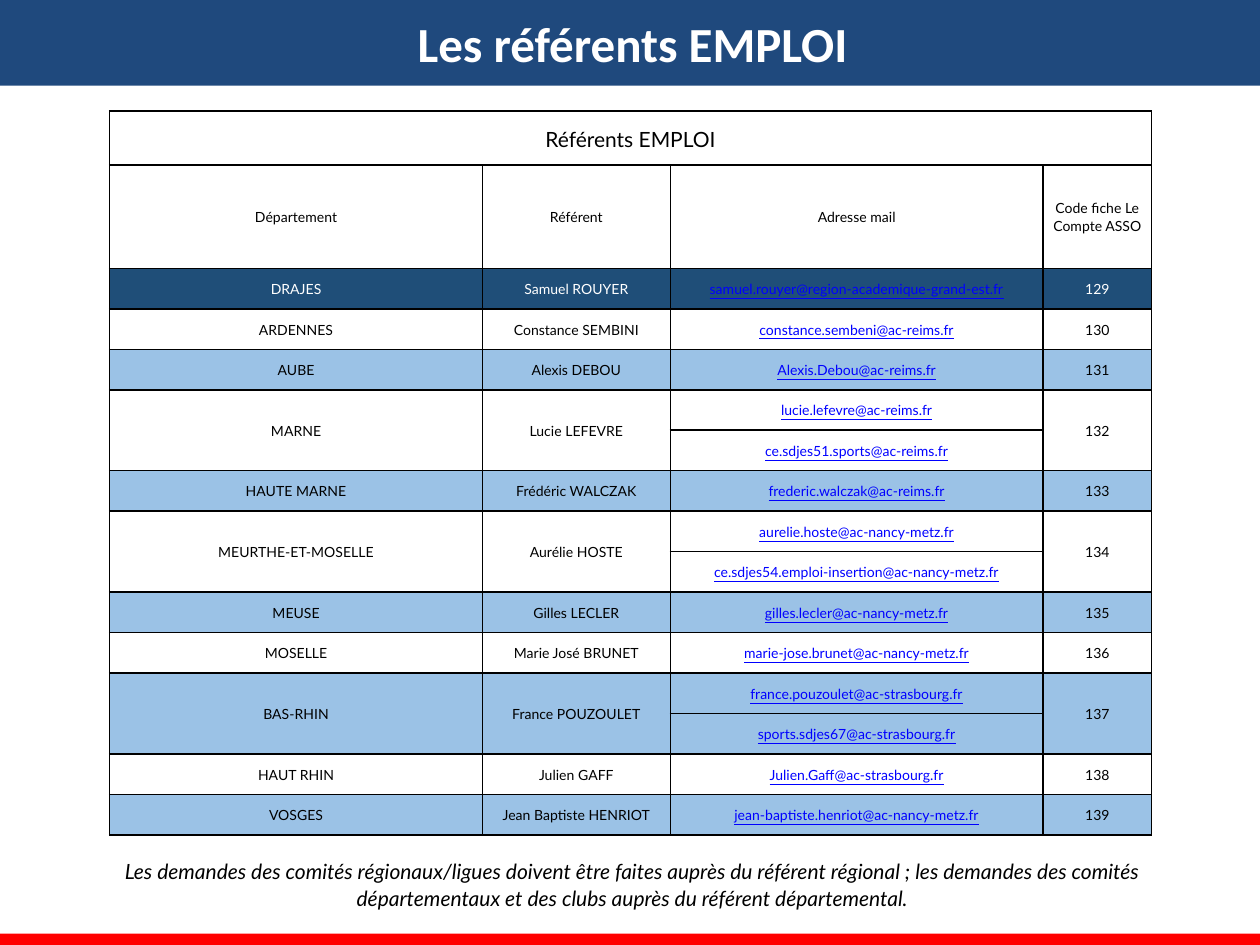
"""Build the slide listing the EMPLOI contacts by department."""
from lxml import etree
from pptx import Presentation
from pptx.dml.color import RGBColor
from pptx.enum.shapes import MSO_SHAPE
from pptx.enum.text import MSO_ANCHOR as ANCHOR, MSO_AUTO_SIZE as AUTOSIZE, PP_ALIGN as ALIGN
from pptx.oxml.ns import qn
from pptx.util import Inches, Pt

CONTACTS = [
    ("DRAJES", "Samuel ROUYER", ["samuel.rouyer@region-academique-grand-est.fr"]),
    ("ARDENNES", "Constance SEMBINI", ["constance.sembeni@ac-reims.fr"]),
    ("AUBE", "Alexis DEBOU", ["Alexis.Debou@ac-reims.fr"]),
    ("MARNE", "Lucie LEFEVRE", ["lucie.lefevre@ac-reims.fr", "ce.sdjes51.sports@ac-reims.fr"]),
    ("HAUTE MARNE", "Frédéric WALCZAK", ["frederic.walczak@ac-reims.fr"]),
    ("MEURTHE-ET-MOSELLE", "Aurélie HOSTE",
     ["aurelie.hoste@ac-nancy-metz.fr", "ce.sdjes54.emploi-insertion@ac-nancy-metz.fr"]),
    ("MEUSE", "Gilles LECLER", ["gilles.lecler@ac-nancy-metz.fr"]),
    ("MOSELLE", "Marie José BRUNET", ["marie-jose.brunet@ac-nancy-metz.fr"]),
    ("BAS-RHIN", "France POUZOULET",
     ["france.pouzoulet@ac-strasbourg.fr", "sports.sdjes67@ac-strasbourg.fr"]),
    ("HAUT RHIN", "Julien GAFF", ["Julien.Gaff@ac-strasbourg.fr"]),
    ("VOSGES", "Jean Baptiste HENRIOT", ["jean-baptiste.henriot@ac-nancy-metz.fr"]),
]
HEADERS = ["Département", "Référent", "Adresse mail", "Code fiche Le Compte ASSO"]
FIRST_CODE = 129


def rgb(color):
    return RGBColor.from_string(color)


def write(tf, text, size, color="000000", font="Lato", spacing=1.07, after=8):
    p = tf.paragraphs[0]
    p.text = text
    p.alignment = ALIGN.CENTER
    p.line_spacing = spacing
    p.space_after = Pt(after)
    r = p.runs[0]
    r.font.name = font
    r.font.size = Pt(size)
    r.font.color.rgb = rgb(color)
    return r


prs = Presentation()
prs.slide_width, prs.slide_height = Inches(10), Inches(7.5)
s = prs.slides.add_slide(prs.slide_layouts[5])

title = s.shapes.title
title.left, title.top, title.width, title.height = 0, 0, Inches(10.04), Inches(0.68)
title.fill.solid()
title.fill.fore_color.rgb = rgb("1F497D")
title.text_frame.auto_size = AUTOSIZE.NONE
title.text_frame.vertical_anchor = ANCHOR.MIDDLE
write(title.text_frame, "Les référents EMPLOI", 28, "FFFFFF", "Calibri", 1.0, 0).font.bold = True

footer = s.shapes.add_shape(MSO_SHAPE.RECTANGLE, 0, Inches(7.41), Inches(10), Inches(0.1))
footer.shadow.inherit = False
footer.fill.solid()
footer.fill.fore_color.rgb = rgb("FF0000")
footer.line.fill.background()

n_mails = sum(len(mails) for _, _, mails in CONTACTS)
table = s.shapes.add_table(n_mails + 2, 4, Inches(0.87), Inches(0.88),
                           Inches(8.27), Inches(5.75)).table
table.first_row = table.horz_banding = False
for col, width in zip(table.columns, [2.96, 1.49, 2.96, 0.86]):
    col.width = Inches(width)
for row, height in zip(table.rows, [0.43, 0.82] + [4.5 / n_mails] * n_mails):
    row.height = Inches(height)

for cell in table.iter_cells():
    cell.margin_left = cell.margin_right = Inches(0.04)
    cell.margin_top = cell.margin_bottom = 0
    cell.vertical_anchor = ANCHOR.MIDDLE
    tcPr = cell._tc.get_or_add_tcPr()
    for side in ("a:lnL", "a:lnR", "a:lnT", "a:lnB"):
        ln = etree.SubElement(tcPr, qn(side), w=str(Pt(1)))
        fill = etree.SubElement(ln, qn("a:solidFill"))
        etree.SubElement(fill, qn("a:srgbClr"), val="000000")
    cell.fill.background()

table.cell(0, 0).merge(table.cell(0, 3))
write(table.cell(0, 0).text_frame, "Référents EMPLOI", 12)
for c, header in enumerate(HEADERS):
    write(table.cell(1, c).text_frame, header, 8)

top = 2
for i, (department, name, mails) in enumerate(CONTACTS):
    bottom = top + len(mails) - 1
    band = "1F4E78" if i == 0 else "9BC2E6" if i % 2 == 0 else None
    color = "FFFFFF" if i == 0 else "000000"
    for r in range(top, bottom + 1):
        for c in range(4):
            if band:
                table.cell(r, c).fill.solid()
                table.cell(r, c).fill.fore_color.rgb = rgb(band)
    for c, text in [(0, department), (1, name), (3, str(FIRST_CODE + i))]:
        if bottom > top:
            table.cell(top, c).merge(table.cell(bottom, c))
        write(table.cell(top, c).text_frame, text, 8, color)
    for r, mail in enumerate(mails, top):
        write(table.cell(r, 2).text_frame, mail, 8, "0000FF").font.underline = True
    top = bottom + 1

note = s.shapes.add_textbox(Inches(0.65), Inches(6.75), Inches(8.74), Inches(0.52))
note.text_frame.word_wrap = True
note.text_frame.auto_size = AUTOSIZE.SHAPE_TO_FIT_TEXT
write(note.text_frame,
      "Les demandes des comités régionaux/ligues doivent être faites auprès du référent régional ; "
      "les demandes des comités départementaux et des clubs auprès du référent départemental.",
      12).font.italic = True

prs.save("out.pptx")
